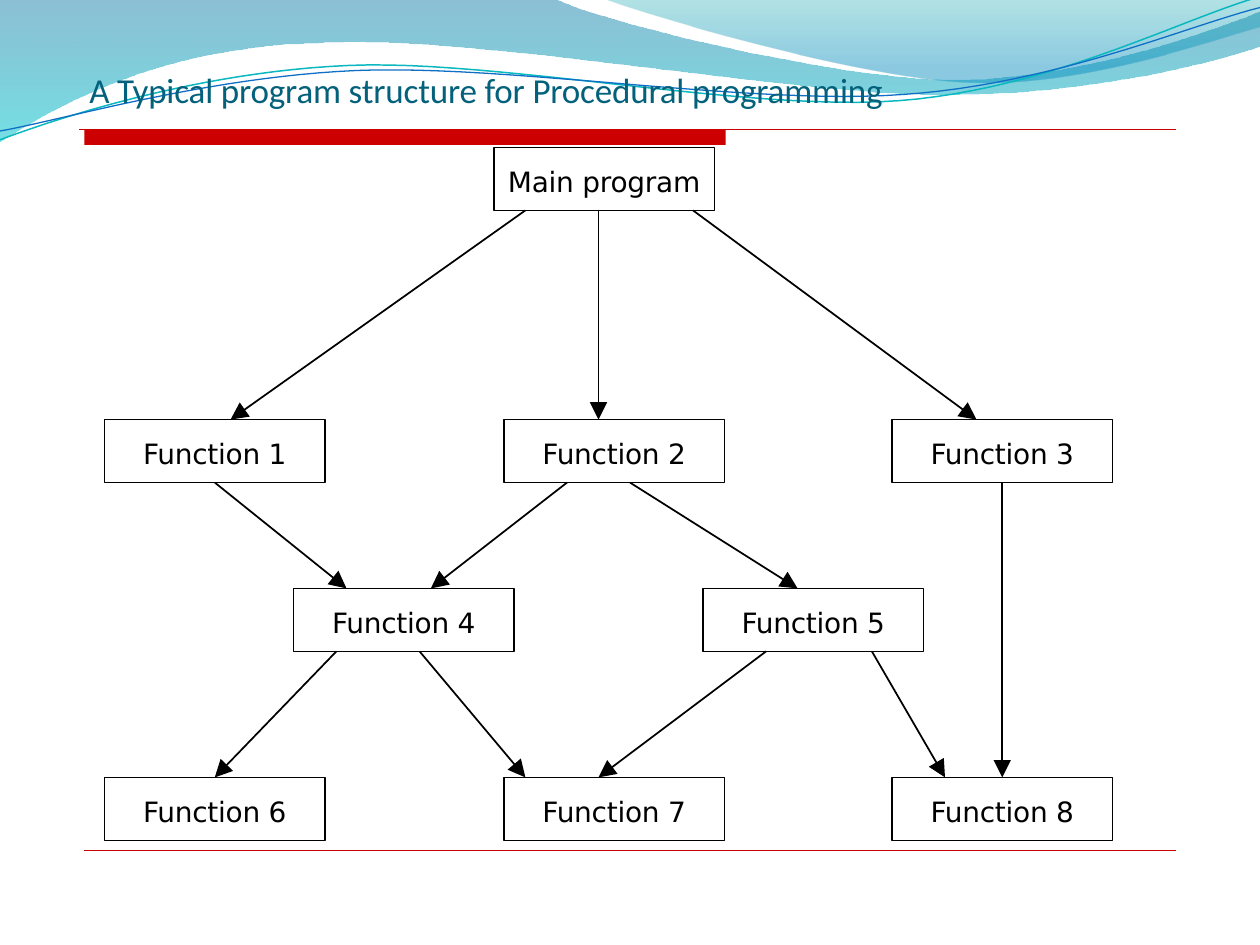
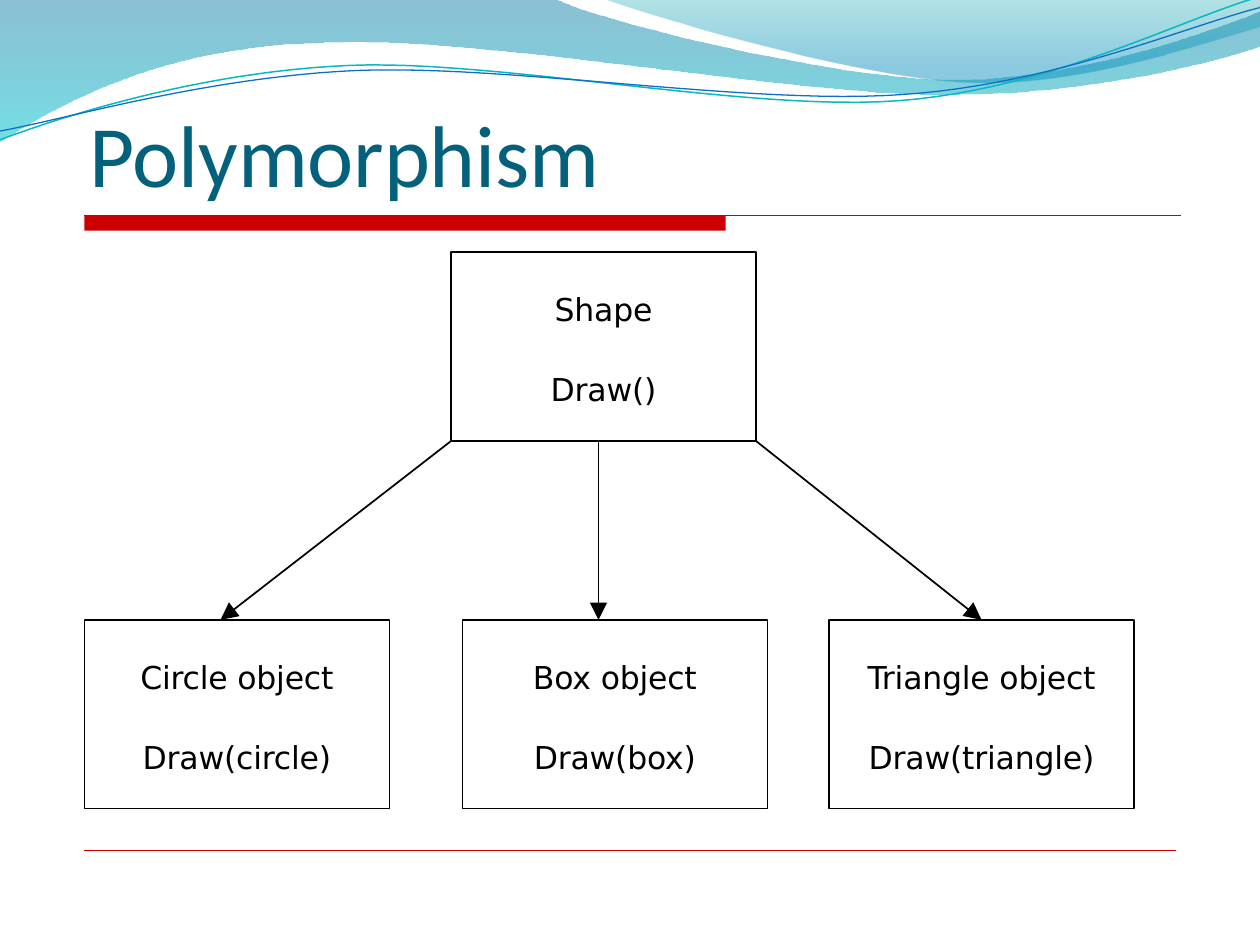
"""Build two diagram slides on program structure and polymorphism."""
from dataclasses import dataclass

import pptx
import pptx.dml.color
import pptx.enum.dml
import pptx.enum.shapes
import pptx.enum.text
import pptx.oxml
import pptx.oxml.ns
import pptx.util
from pptx.util import Inches

qn = pptx.oxml.ns.qn


@dataclass(frozen=True)
class Theme:
    """Colours, fonts and type sizes."""
    title: str = "04617B"
    accent: str = "CC0000"
    ink: str = "000000"
    wave_teal: str = "0AB8BF"
    wave_blue: str = "0F6FC6"
    broad_wave: tuple = ((0, "0074A1", 45), (1, "00C6CF", 55))
    corner_wave: tuple = ((0, "00A1A9", 30), (0.8, "008BBF", 45))
    title_font: str = "Calibri"
    body_font: str = "DejaVu Sans"
    long_title_size: int = 20
    short_title_size: int = 50
    function_size: int = 16
    class_size: int = 18
    tracking: str = "-10"


BROAD_WAVE = [
    [(0, 0)], [(4.4, -0.01)],
    [(4.76, 0.17), (6.64, 0.63), (7.58, 0.63)],
    [(8.53, 0.63), (9.58, 0.26), (10, 0.09)], [(10.01, 0.36)],
    [(9.83, 0.44), (8.7, 0.76), (7.46, 0.75)],
    [(6.22, 0.75), (3.82, 0.28), (2.57, 0.34)],
    [(1.29, 0.36), (0.46, 0.83), (-0.01, 1.13)],
]
CORNER_WAVE = [
    [(4.79, -0.01)],
    [(5.09, 0.11), (6.82, 0.62), (7.69, 0.65)],
    [(8.56, 0.69), (9.61, 0.32), (10, 0.21)], [(10, 0)],
]
TEAL_STRAND = [
    [(0, 1.11)],
    [(0.48, 0.93), (1.58, 0.57), (2.77, 0.52)],
    [(3.95, 0.47), (5.93, 0.89), (7.13, 0.8)],
    [(8.33, 0.71), (9.38, 0.15), (9.98, -0.02)],
]
BLUE_STRAND = [
    [(0, 1.04)],
    [(0.47, 0.96), (1.64, 0.61), (2.83, 0.56)],
    [(4.03, 0.51), (5.97, 0.84), (7.17, 0.75)],
    [(8.36, 0.67), (9.41, 0.21), (10, 0.06)],
]


def rgb(code):
    """Turn a hex code into a colour."""
    return pptx.dml.color.RGBColor.from_string(code)


def drawing_tag(tag):
    """Return a new DrawingML element."""
    return pptx.oxml.parse_xml(f"<a:{tag} {pptx.oxml.ns.nsdecls('a')}/>")


def trace(segments, steps=24):
    """Return the points along straight and cubic segments."""
    points = list(segments[0])
    for segment in segments[1:]:
        if len(segment) == 1:
            points += segment
            continue
        controls = [points[-1], *segment]
        for step in range(1, steps + 1):
            t = step / steps
            weights = ((1 - t) ** 3, 3 * t * (1 - t) ** 2, 3 * t * t * (1 - t), t ** 3)
            points.append(tuple(
                sum(w * control[axis] for w, control in zip(weights, controls))
                for axis in (0, 1)))
    return [(Inches(x), Inches(y)) for x, y in points]


class Deck:
    """Hold the style and the current slide."""

    def __init__(self, theme):
        """Start an empty 10 by 7.5 inch presentation."""
        self.theme = theme
        self.presentation = pptx.Presentation()
        self.presentation.slide_width = Inches(10)
        self.presentation.slide_height = Inches(7.5)
        self.layout = self.presentation.slide_layouts[5]
        self.slide = None

    def add_slide(self, title, size, title_box, rule_left, rule_top):
        """Add a slide with its title and red rules."""
        self.slide = self.presentation.slides.add_slide(self.layout)
        heading = self.slide.shapes.title
        heading.left, heading.top, heading.width, heading.height = map(Inches, title_box)
        self.set_text(heading.text_frame, [title], self.theme.title_font, size,
                      self.theme.title, pptx.enum.text.PP_ALIGN.LEFT,
                      pptx.enum.text.MSO_ANCHOR.BOTTOM)
        band = self.rectangle(0.67, rule_top, 5.09, 0.12)
        band.fill.solid()
        band.fill.fore_color.rgb = rgb(self.theme.accent)
        band.line.fill.background()
        self.line((rule_left, rule_top), (rule_left + 8.7, rule_top), self.theme.accent, 0.75)
        self.line((0.67, 6.75), (9.33, 6.75), self.theme.accent, 0.25)

    def wave(self, segments, closed):
        """Draw a wave and move it to the shared layout."""
        start, *rest = trace(segments)
        builder = self.slide.shapes.build_freeform(*start)
        builder.add_line_segments(rest, close=closed)
        wave = builder.convert_to_shape()
        wave.shadow.inherit = False
        wave.element.find(".//" + qn("p:cNvPr")).set(
            "id", str(100 + len(self.layout.shapes)))
        self.layout.shapes.element.append(wave.element)
        return wave

    def filled_wave(self, segments, stops):
        """Draw a closed wave with a see-through vertical gradient."""
        wave = self.wave(segments, True)
        wave.line.fill.background()
        wave.fill.gradient()
        wave.fill.gradient_angle = 270
        for stop, (position, color, _) in zip(wave.fill.gradient_stops, stops):
            stop.position = position
            stop.color.rgb = rgb(color)
        for tint, (_, _, opacity) in zip(wave.element.iter(qn("a:srgbClr")), stops):
            alpha = drawing_tag("alpha")
            alpha.set("val", str(opacity * 1000))
            tint.append(alpha)

    def strand(self, segments, color, width):
        """Draw an open wave line."""
        strand = self.wave(segments, False)
        strand.fill.background()
        strand.line.color.rgb = rgb(color)
        strand.line.width = pptx.util.Pt(width)

    def set_text(self, frame, lines, font, size, color, align, anchor, gap=0):
        """Fill a text frame with formatted lines."""
        frame.word_wrap = True
        frame.auto_size = pptx.enum.text.MSO_AUTO_SIZE.NONE
        frame.vertical_anchor = anchor
        frame.margin_left = frame.margin_right = frame.margin_top = frame.margin_bottom = 0
        for index, line in enumerate(lines):
            paragraph = frame.add_paragraph() if index else frame.paragraphs[0]
            paragraph.alignment = align
            paragraph.space_before = pptx.util.Pt(gap if index else 0)
            run = paragraph.add_run()
            run.text = line
            run.font.name = font
            run.font.size = pptx.util.Pt(size)
            run.font.color.rgb = rgb(color)
            run._r.get_or_add_rPr().set("spc", self.theme.tracking)

    def rectangle(self, left, top, width, height):
        """Add a rectangle without shadow."""
        rectangle = self.slide.shapes.add_shape(
            pptx.enum.shapes.MSO_SHAPE.RECTANGLE, *map(Inches, (left, top, width, height)))
        rectangle.shadow.inherit = False
        return rectangle

    def node(self, lines, left, top, width, height, size):
        """Add an outlined diagram box with centred text."""
        node = self.rectangle(left, top, width, height)
        node.fill.background()
        node.line.color.rgb = rgb(self.theme.ink)
        node.line.width = pptx.util.Pt(0.75)
        self.set_text(node.text_frame, lines, self.theme.body_font, size, self.theme.ink,
                      pptx.enum.text.PP_ALIGN.CENTER, pptx.enum.text.MSO_ANCHOR.MIDDLE, 24)
        node.text_frame.margin_top = Inches(0.04)
        return node

    def line(self, start, end, color, width):
        """Add a straight line without shadow."""
        line = self.slide.shapes.add_connector(
            pptx.enum.shapes.MSO_CONNECTOR.STRAIGHT, *map(Inches, (*start, *end)))
        line.line.width = pptx.util.Pt(width)
        line.line.color.rgb = rgb(color)
        line.element.spPr.append(drawing_tag("effectLst"))
        return line

    def arrow(self, start, end, source=None, target=None):
        """Add a downward arrow, joined to the given boxes."""
        arrow = self.line(start, end, self.theme.ink, 1)
        head = drawing_tag("tailEnd")
        for key, value in (("type", "triangle"), ("w", "lg"), ("len", "lg")):
            head.set(key, value)
        arrow.element.spPr.find(qn("a:ln")).append(head)
        if source is not None:
            arrow.begin_connect(source, 2)
        if target is not None:
            arrow.end_connect(target, 0)


def draw_waves(deck):
    """Draw the shared header waves."""
    deck.filled_wave(BROAD_WAVE, deck.theme.broad_wave)
    deck.filled_wave(CORNER_WAVE, deck.theme.corner_wave)
    deck.strand(TEAL_STRAND, deck.theme.wave_teal, 0.85)
    deck.strand(BLUE_STRAND, deck.theme.wave_blue, 0.75)


def draw_procedural(deck):
    """Draw the call tree of a procedural program."""
    width, height = 1.75, 0.5
    main_top, upper, middle, lower = 1.17, 3.33, 4.67, 6.17
    outer = (0.83, 4, 7.08)
    places = [(left, upper) for left in outer]
    places += [(2.33, middle), (5.58, middle)]
    places += [(left, lower) for left in outer]

    size = deck.theme.function_size
    deck.node(["Main program"], 3.92, main_top, width, height, size)
    functions = {
        number: deck.node([f"Function {number}"], left, top, width, height, size)
        for number, (left, top) in enumerate(places, 1)}

    calls = [
        (4.17, main_top, 1.83, upper, None, None),
        (4.75, main_top, 4.75, upper, None, None),
        (5.5, main_top, 7.75, upper, None, None),
        (1.75, upper, 2.75, middle, 1, None),
        (4.5, upper, 3.42, middle, None, None),
        (5, upper, 6.33, middle, None, None),
        (8, upper, 8, lower, 3, 8),
        (2.67, middle, 1.75, lower, None, 6),
        (3.33, middle, 4.17, lower, None, None),
        (6.08, middle, 4.75, lower, None, None),
        (6.92, middle, 7.5, lower, None, None),
    ]
    for start, caller_top, end, callee_top, caller, callee in calls:
        deck.arrow((start, caller_top + height), (end, callee_top),
                   functions.get(caller), functions.get(callee))


def draw_polymorphism(deck):
    """Draw the base class and its three objects."""
    width, height = 2.42, 1.5
    base_top, object_top = 2, 4.92
    size = deck.theme.class_size
    deck.node(["Shape", "Draw()"], 3.58, base_top, width, height, size)
    objects = [
        deck.node([f"{name} object", f"Draw({name.lower()})"],
                  left, object_top, width, height, size)
        for name, left in (("Circle", 0.67), ("Box", 3.67), ("Triangle", 6.58))]
    for start, end, target in ((3.58, 1.75, None), (4.75, 4.75, None), (6, 7.83, objects[2])):
        deck.arrow((start, base_top + height), (end, object_top), target=target)


def main():
    """Build and save the presentation."""
    deck = Deck(Theme())
    deck.add_slide("A Typical program structure for Procedural programming",
                   deck.theme.long_title_size, (0.71, 0.52, 7.96, 0.36), 0.63, 1.03)
    draw_waves(deck)
    draw_procedural(deck)
    deck.add_slide("Polymorphism", deck.theme.short_title_size,
                   (0.71, 0.77, 4.62, 0.86), 0.67, 1.71)
    draw_polymorphism(deck)
    deck.presentation.save("out.pptx")


if __name__ == "__main__":
    main()
